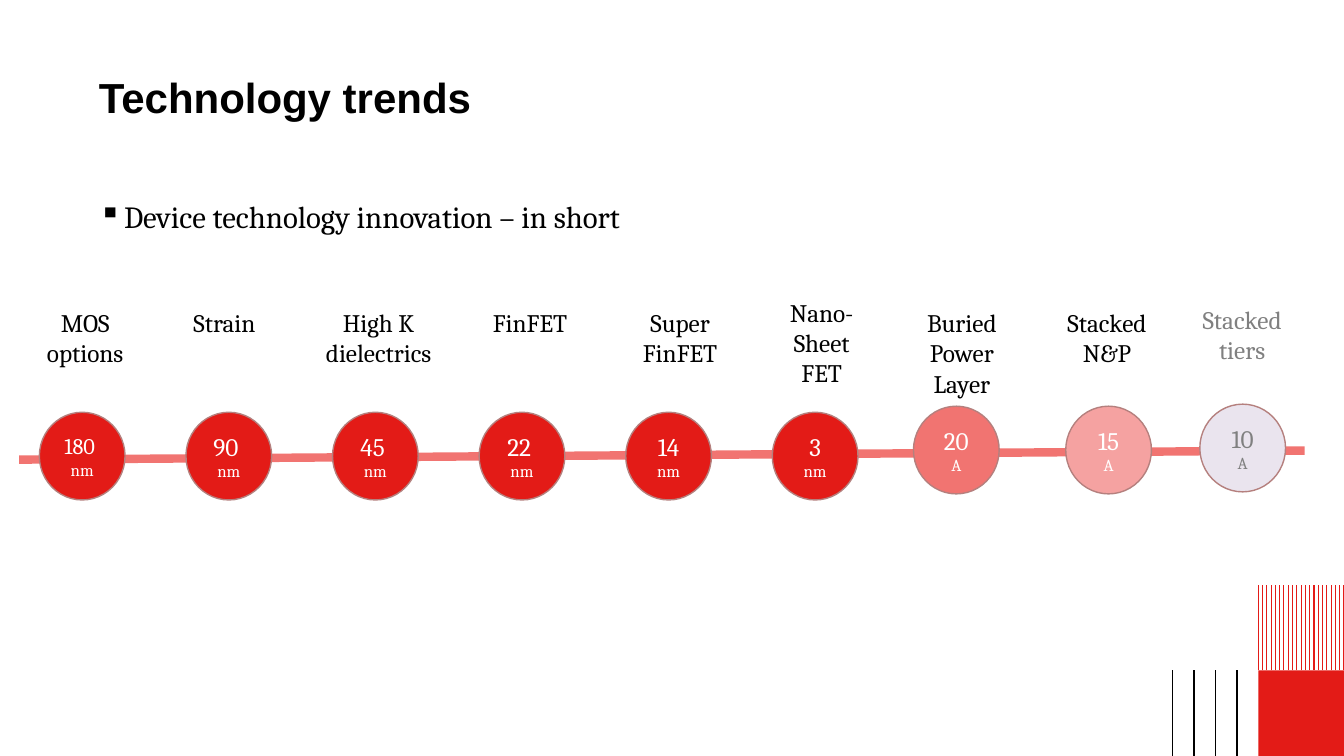
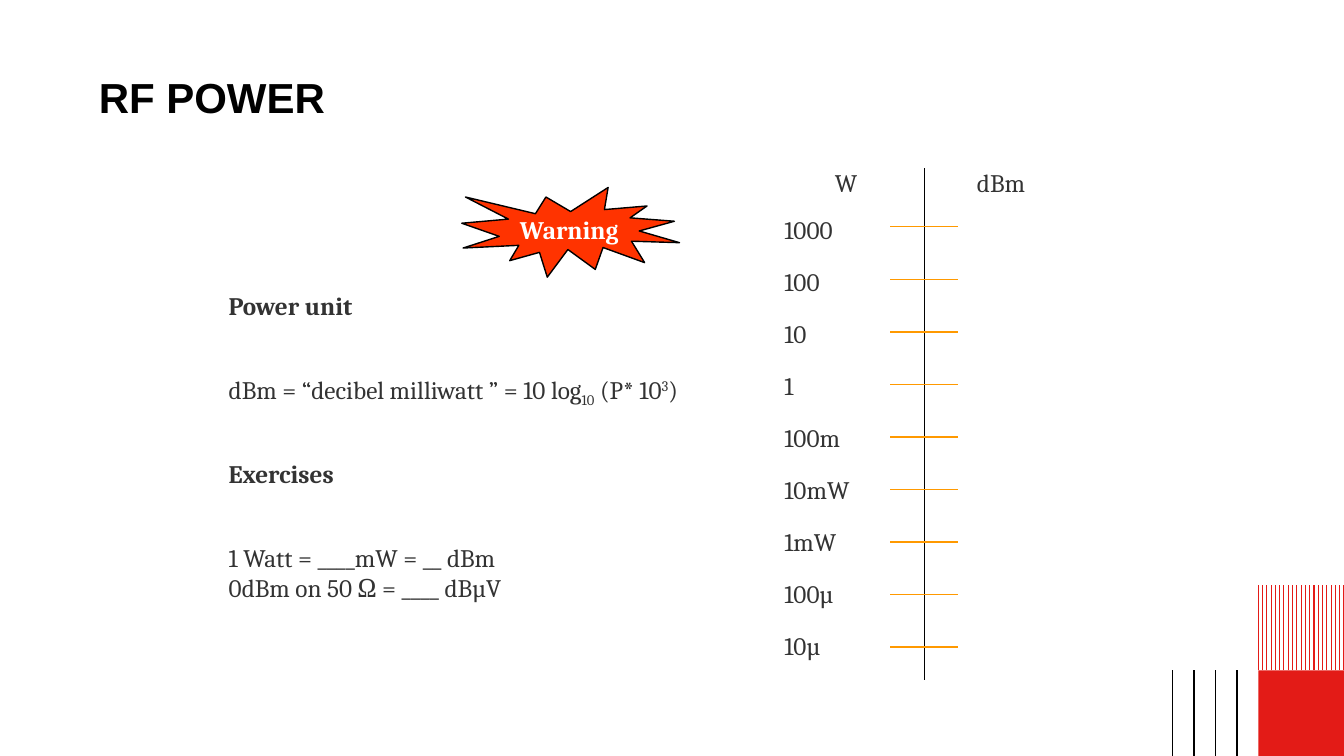
from lxml.etree import SubElement
from pptx import Presentation
from pptx.dml.color import RGBColor
from pptx.enum.shapes import MSO_CONNECTOR, MSO_SHAPE
from pptx.enum.text import MSO_ANCHOR as ANCHOR, PP_ALIGN as ALIGN
from pptx.oxml.ns import qn
from pptx.util import Inches, Pt

COLORS = {
    "black": "000000", "white": "FFFFFF", "text": "333333", "gray": "808080",
    "red": "E31B17", "coral": "F17471", "pink": "F5A2A1", "mist": "EAE4EE",
    "rim": "B5807E", "alert": "FF3300", "orange": "FF9900",
}
SLIDE_W, SLIDE_H = 13.33, 7.5
TILE = 0.85


def rgb(name):
    return RGBColor.from_string(COLORS[name])


class Deck:
    heading_font, body_font = "Arial", "Cambria"

    def __init__(self):
        self.prs = Presentation()
        self.prs.slide_width = Inches(SLIDE_W)
        self.prs.slide_height = Inches(SLIDE_H)
        self.s = None

    def new_slide(self, title):
        self.s = self.prs.slides.add_slide(self.prs.slide_layouts[6])
        self.corner()
        p = self.text(0.98, 0.77, 11.38, 0.6, [title], 30, "black", bold=True,
                      font=self.heading_font, inset=(0, 0))
        p.line_spacing = 0.9

    def corner(self):
        left, top = SLIDE_W - TILE, SLIDE_H - 2 * TILE
        self.stripes(left, top, 21)
        self.shape(MSO_SHAPE.RECTANGLE, left, top + TILE, TILE, TILE, "red")
        for i in range(4):
            x = 11.63 + i * 0.64 / 3
            self.line(x, top + TILE, x, SLIDE_H, "black")

    def stripes(self, x, y, count):
        top, bottom = Inches(y), Inches(y + TILE)
        xs = [Inches(x + i * TILE / (count - 1)) for i in range(count)]
        fb = self.s.shapes.build_freeform(xs[0], bottom)
        for px in xs:
            fb.move_to(px, bottom)
            fb.add_line_segments([(px, top)], close=False)
        sp = fb.convert_to_shape()
        sp.shadow.inherit = False
        sp.fill.background()
        sp.line.color.rgb = rgb("red")
        sp.line.width = Pt(0.75)

    def line(self, x1, y1, x2, y2, color, width=1):
        c = self.s.shapes.add_connector(
            MSO_CONNECTOR.STRAIGHT, Inches(x1), Inches(y1), Inches(x2), Inches(y2))
        c.line.color.rgb = rgb(color)
        c.line.width = Pt(width)
        SubElement(c._element.spPr, qn("a:effectLst"))

    def shape(self, kind, x, y, w, h, fill, line=None):
        sp = self.s.shapes.add_shape(kind, Inches(x), Inches(y), Inches(w), Inches(h))
        sp.shadow.inherit = False
        sp.fill.solid()
        sp.fill.fore_color.rgb = rgb(fill)
        if line:
            sp.line.color.rgb = rgb(line)
            sp.line.width = Pt(1)
        else:
            sp.line.fill.background()
        sp.text_frame.vertical_anchor = ANCHOR.MIDDLE
        return sp

    def style(self, p, size, color, bold=False, font=None, align=ALIGN.LEFT):
        p.alignment = align
        p.font.size = Pt(size)
        p.font.name = font or self.body_font
        p.font.bold = bold
        p.font.color.rgb = rgb(color)

    def text(self, x, y, w, h, lines, size=18, color="text", inset=(0.1, 0.05), **style):
        tf = self.s.shapes.add_textbox(Inches(x), Inches(y), Inches(w), Inches(h)).text_frame
        tf.word_wrap = True
        tf.margin_left = tf.margin_right = Inches(inset[0])
        tf.margin_top = tf.margin_bottom = Inches(inset[1])
        tf.text = "\n".join(lines)
        for p in tf.paragraphs:
            self.style(p, size, color, **style)
        return tf.paragraphs[0]

    def bullet(self, x, y, w, h, text):
        p = self.text(x, y, w, h, [text], 22, "black", inset=(0, 0))
        p.line_spacing = 0.9
        pPr = p._p.get_or_add_pPr()
        pPr.set("marL", str(Inches(0.25)))
        pPr.set("indent", str(-Inches(0.25)))
        mark = pPr.makeelement(qn("a:buChar"), {"char": "▪"})
        pPr.find(qn("a:defRPr")).addprevious(mark)

    def node(self, x, y, number, unit, fill, color, size):
        tf = self.shape(MSO_SHAPE.OVAL, x, y, 0.85, 0.87, fill, "rim").text_frame
        tf.word_wrap = True
        tf.text = f"{number}\n{unit}"
        for p, pt in zip(tf.paragraphs, (size, 12)):
            self.style(p, pt, color, align=ALIGN.CENTER)

    def burst(self, x, y, w, h, text):
        tf = self.shape(MSO_SHAPE.EXPLOSION1, x, y, w, h, "alert", "black").text_frame
        tf.word_wrap = False
        tf.text = text
        self.style(tf.paragraphs[0], 18, "white", bold=True, align=ALIGN.CENTER)

    def formula(self, x, y, w, h, parts):
        p = self.text(x, y, w, h, [""])
        for text, baseline in parts:
            r = p.add_run()
            r.text = text
            if baseline:
                r._r.get_or_add_rPr().set("baseline", str(baseline * 1000))


def technology_trends(deck):
    deck.new_slide("Technology trends")
    deck.bullet(0.98, 2, 11.38, 0.5, "Device technology innovation – in short")
    deck.line(0.19, 4.56, 12.94, 4.47, "coral", 6)
    mid, left = ALIGN.CENTER, ALIGN.LEFT
    past = [
        ("180 ", 16, 0.32, 3, 1.05, mid, ["MOS options"]),
        ("90 ", 18, 1.82, 3, 1.05, left, ["Strain"]),
        ("45 ", 18, 3.08, 3, 1.35, mid, ["High K dielectrics"]),
        ("22 ", 18, 4.79, 3, 1.05, left, ["FinFET"]),
        ("14", 18, 6.22, 3, 1.05, mid, ["Super", "FinFET"]),
        ("3", 18, 7.55, 2.9, 1.2, mid, ["Nano-Sheet FET"]),
    ]
    for i, (number, size, x, y, w, align, label) in enumerate(past):
        deck.node(0.39 + i * 7.27 / 5, 4.09, number, "nm", "red", "white", size)
        deck.text(x, y, w, 0.71, label, color="black", align=align)
    future = [
        ("20", 9.06, 4.03, "coral", "white", 8.94, 3, "black", "Buried Power Layer"),
        ("15", 10.57, 4.03, "pink", "white", 10.38, 3, "black", "Stacked N&P"),
        ("10", 11.9, 4.01, "mist", "gray", 11.72, 2.97, "gray", "Stacked tiers"),
    ]
    for number, x, y, fill, ink, label_x, label_y, color, label in future:
        deck.node(x, y, number, "A", fill, ink, 18)
        deck.text(label_x, label_y, 1.2, 0.71, [label], color=color, align=mid)


def rf_power(deck):
    deck.new_slide("RF POWER")
    deck.text(2.17, 2.83, 1.8, 0.4, ["Power unit"], bold=True)
    deck.formula(2.17, 3.66, 4.91, 0.4, [
        ("dBm = “decibel milliwatt ” = 10 log", 0), ("10", -25),
        (" (P* 10", 0), ("3", 30), (")", 0)])
    deck.text(2.17, 4.5, 1.8, 0.4, ["Exercises"], bold=True)
    deck.text(2.17, 5.33, 5.25, 0.71,
              ["1 Watt = ____mW = __ dBm", "0dBm on 50 Ω = ____ dBµV"])
    deck.burst(4.58, 1.86, 2.16, 0.89, "Warning")

    inset = (0.11, 0.06)
    deck.line(9.17, 1.67, 9.17, 6.75, "black")
    for x, unit in ((8.17, "W"), (9.58, "dBm")):
        deck.text(x, 1.6, 0.9, 0.41, [unit], inset=inset)
    levels = ["1000", "100", "10", "1", "100m", "10mW", "1mW", "100µ", "10µ"]
    for i, level in enumerate(levels):
        tick = 2.25 + i * 4.17 / 8
        deck.line(8.83, tick, 9.5, tick, "orange")
        deck.text(7.67, 2.07 + i * 4.12 / 8, 1.1, 0.41, [level], inset=inset)


def main():
    deck = Deck()
    technology_trends(deck)
    rf_power(deck)
    deck.prs.save("out.pptx")


if __name__ == "__main__":
    main()
